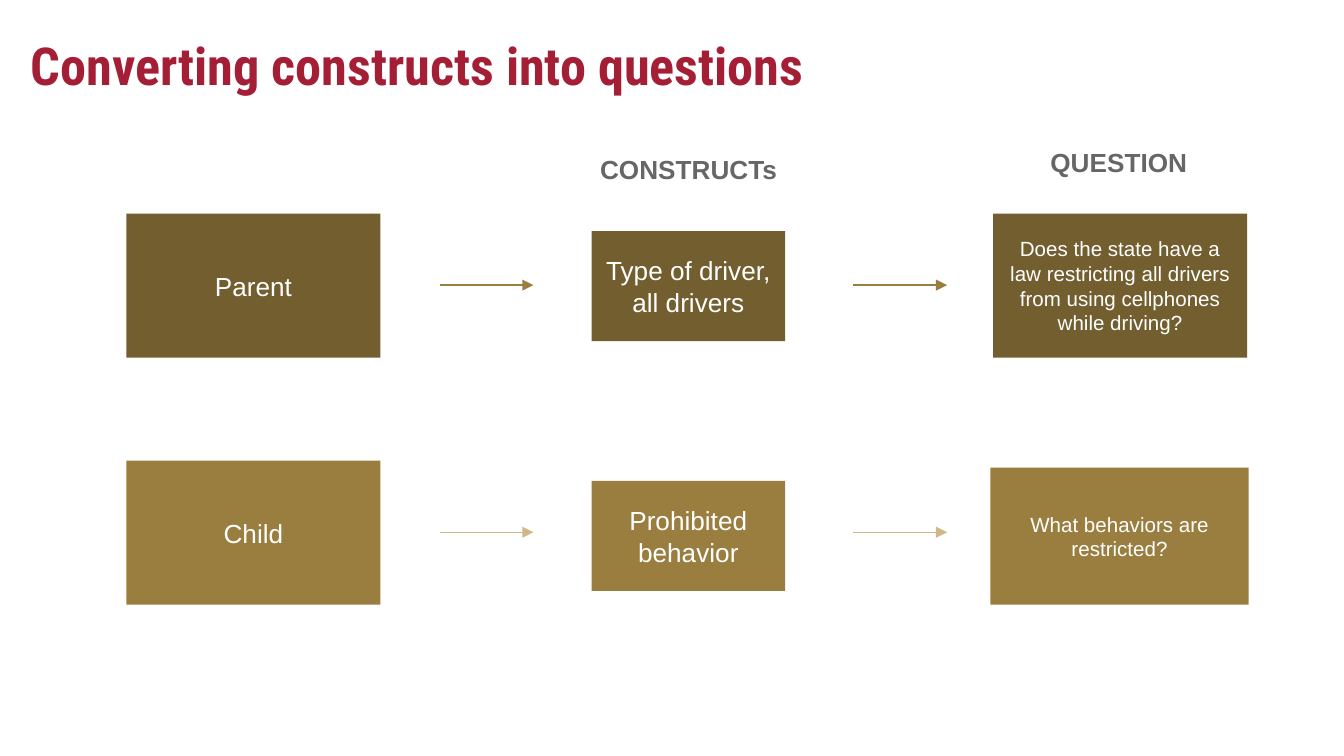
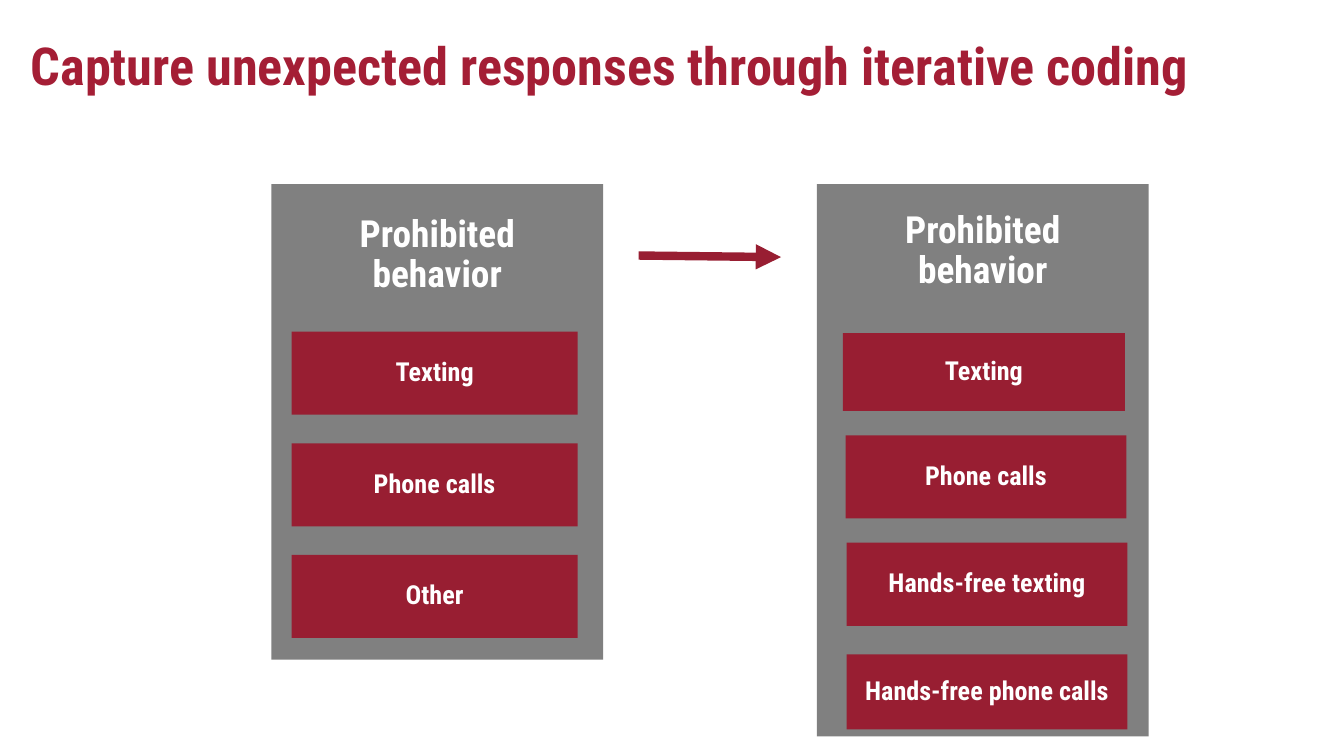
from lxml.etree import SubElement as Sub
from pptx import Presentation as Deck
from pptx.dml.color import RGBColor as Rgb
from pptx.enum.shapes import MSO_CONNECTOR as Link, MSO_SHAPE as Form
from pptx.enum.text import MSO_ANCHOR as Anchor, PP_ALIGN as Align
from pptx.oxml.ns import qn
from pptx.util import Cm, Pt

# Shared style
HEAD, BODY = "Roboto Condensed", "Arial"
RED, CARD, WHITE = "A41E35", "981E32", "FFFFFF"
DARK, GOLD, SAND = "735E30", "9A7E40", "CEB888"
GREY, INK = "808080", "666666"


def tint(code):
    return Rgb.from_string(code)


def write(shape, text, size=14, font=BODY, color=WHITE, bold=False,
          align=Align.CENTER, anchor=Anchor.MIDDLE, pad=(0.25, 0.13), lead=1.0):
    """Put one formatted paragraph into a shape; pad is (side, top) in cm."""
    frame = shape.text_frame
    frame.word_wrap = True
    frame.vertical_anchor = anchor
    frame.margin_left = frame.margin_right = Cm(pad[0])
    frame.margin_top = frame.margin_bottom = Cm(pad[1])
    para = frame.paragraphs[0]
    para.alignment = align
    para.line_spacing = lead
    run = para.add_run()
    run.text = text
    run.font.name = font
    run.font.size = Pt(size)
    run.font.bold = bold
    run.font.color.rgb = tint(color)


class Show:
    def __init__(self):
        self.deck = Deck()
        self.deck.slide_width, self.deck.slide_height = Cm(25.4), Cm(14.29)
        self.slide = None

    def page(self, title):
        self.slide = self.deck.slides.add_slide(self.deck.slide_layouts[6])
        self.label((0.33, 0.38, 23.27, 1.6), title, size=28, font=HEAD, color=RED,
                   bold=True, align=Align.LEFT, anchor=Anchor.TOP, pad=(0.25, 0.25))

    def label(self, area, text, **style):
        write(self.slide.shapes.add_textbox(*map(Cm, area)), text, **style)

    def box(self, area, fill, text="", **style):
        shape = self.slide.shapes.add_shape(Form.RECTANGLE, *map(Cm, area))
        shape.shadow.inherit = False
        shape.fill.solid()
        shape.fill.fore_color.rgb = tint(fill)
        shape.line.fill.background()
        if text:
            write(shape, text, **style)

    def arrow(self, start, end, color, width):
        line = self.slide.shapes.add_connector(
            Link.STRAIGHT, *map(Cm, (*start, *end)))
        line.line.color.rgb = tint(color)
        line.line.width = Pt(width)
        Sub(line.line._get_or_add_ln(), qn("a:tailEnd"), type="triangle")
        Sub(line._element.spPr, qn("a:effectLst"))

    def panel(self, left, tall, head, cards):
        """Grey panel with a heading and a stack of red cards."""
        top, wide = 3.48, 6.27
        self.box((left, top, wide, tall), GREY)
        self.label((left, top, wide, head), "Prohibited behavior", size=20,
                   font=HEAD, bold=True, pad=(0.41, 0.41), lead=0.9)
        for text, area in cards:
            self.box(area, CARD, text, font=HEAD, bold=True,
                     pad=(0.13, 0.1), lead=0.9)


def main():
    show = Show()

    # Slide 1: from level to construct to question
    show.page("Converting constructs into questions")
    for left, top, text in ((9.6, 2.77, "CONSTRUCTs"), (17.73, 2.64, "QUESTION")):
        show.label((left, top, 6.83, 0.86), text, color=INK, bold=True,
                   anchor=Anchor.TOP)
    rows = (
        (DARK, GOLD, 4.04, 4.37, "Parent", "Type of driver, all drivers",
         (18.77, 4.04, 4.8, 2.72),
         "Does the state have a law restricting all drivers "
         "from using cellphones while driving?"),
        (GOLD, SAND, 8.71, 9.09, "Child", "Prohibited behavior",
         (18.72, 8.84, 4.88, 2.59), "What behaviors are restricted?"),
    )
    for fill, line, top, mid, level, topic, area, ask in rows:
        show.box((2.39, top, 4.8, 2.72), fill, level)
        show.box((11.18, mid, 3.66, 2.08), fill, topic)
        show.box(area, fill, ask, size=11)
        axis = top + 1.35
        for left in (8.31, 16.13):
            show.arrow((left, axis), (left + 1.77, axis), line, 0.75)

    # Slide 2: answer list before and after coding
    show.page("Capture unexpected responses through iterative coding")
    first = [(text, (5.51, 6.27 + 2.11 * i, 5.41, 1.57))
             for i, text in enumerate(("Texting", "Phone calls", "Other"))]
    show.panel(5.13, 8.99, 2.69, first)
    show.panel(15.44, 10.44, 2.54, (
        ("Texting", (15.93, 6.3, 5.33, 1.47)),
        ("Phone calls", (15.98, 8.23, 5.31, 1.57)),
        ("Hands-free texting", (16, 10.26, 5.31, 1.57)),
        ("Hands-free phone calls", (16, 12.37, 5.31, 1.42)),
    ))
    show.arrow((12.07, 4.83), (14.76, 4.86), CARD, 4.5)

    show.deck.save("out.pptx")


if __name__ == "__main__":
    main()
